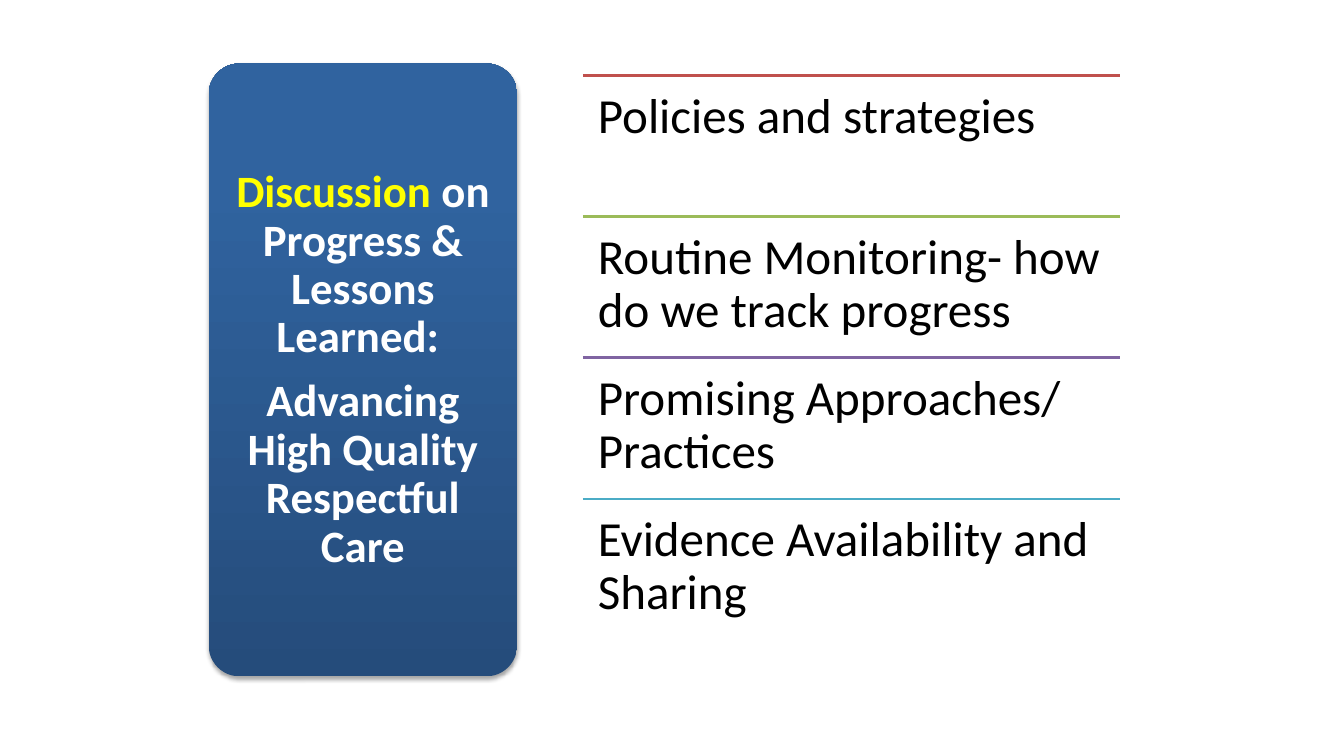
from pptx import Presentation
from pptx.dml.color import RGBColor
from pptx.enum.shapes import MSO_CONNECTOR, MSO_SHAPE
from pptx.enum.text import MSO_ANCHOR, PP_ALIGN
from pptx.oxml import parse_xml
from pptx.oxml.ns import nsdecls, qn
from pptx.util import Pt

PX = 9144  # 100 px to the inch
LINE = MSO_CONNECTOR.STRAIGHT
ROUND = MSO_SHAPE.ROUNDED_RECTANGLE
TOP, MIDDLE = MSO_ANCHOR.TOP, MSO_ANCHOR.MIDDLE
LEFT, CENTER = PP_ALIGN.LEFT, PP_ALIGN.CENTER

COLORS = {
    "red": "C0504D", "green": "9BBB59", "purple": "8064A2", "aqua": "4BACC6",
    "deep": "254C7B", "blue": "30639F", "light": "2E63A2",
    "black": "000000", "white": "FFFFFF", "yellow": "FFFF00",
}
TOPICS = [
    ("Policies and strategies", "red"),
    ("Routine Monitoring- how do we track progress", "green"),
    ("Promising Approaches/ Practices", "purple"),
    ("Evidence Availability and Sharing", "aqua"),
]
TITLE = [
    [("Discussion", "yellow"), (" on Progress & Lessons Learned: ", "white")],
    [("Advancing High Quality Respectful Care", "white")],
]


def px(*vals):
    return [round(val * PX) for val in vals]


def rgb(name):
    return RGBColor.from_string(COLORS[name])


def add_text(slide, box, paras, size, bold=False, align=LEFT, anchor=TOP):
    frame = slide.shapes.add_textbox(*px(*box)).text_frame
    frame.word_wrap = True
    frame.vertical_anchor = anchor
    frame.margin_left = frame.margin_right = 15 * PX
    frame.margin_top = frame.margin_bottom = 15 * PX
    frame.text = "\n".join("".join(text for text, _ in runs) for runs in paras)
    for para, runs in zip(frame.paragraphs, paras):
        para.alignment = align
        para.line_spacing = 0.9
        para.space_after = Pt(round(size * 0.35))
        para.text = ""
        for text, color in runs:
            run = para.add_run()
            run.text = text
            run.font.name = "Calibri"
            run.font.size = Pt(size)
            run.font.bold = bold
            run.font.color.rgb = rgb(color)


def add_rule(slide, left, top, width, color):
    rule = slide.shapes.add_connector(LINE, *px(left, top, left + width, top))
    rule.line.color.rgb = rgb(color)
    rule.line.width = Pt(2)
    rule._element.spPr.append(parse_xml(f"<a:effectLst {nsdecls('a')}/>"))


def add_panel(slide, box, stops):
    panel = slide.shapes.add_shape(ROUND, *px(*box))
    panel.adjustments[0] = 0.1
    panel.line.fill.background()
    panel.shadow.inherit = False
    # Gradient running upwards from the dark edge
    marks = "".join(
        f'<a:gs pos="{pos * 1000}"><a:srgbClr val="{COLORS[name]}"/></a:gs>'
        for pos, name in stops)
    props = panel._element.spPr
    props.find(qn("a:prstGeom")).addnext(parse_xml(
        f'<a:gradFill {nsdecls("a")} rotWithShape="1"><a:gsLst>{marks}</a:gsLst>'
        '<a:lin ang="16200000" scaled="0"/></a:gradFill>'))
    # Soft shadow below
    props.find(qn("a:effectLst")).append(parse_xml(
        f'<a:outerShdw {nsdecls("a")} blurRad="{Pt(3.1)}" dist="{Pt(1.8)}" '
        'dir="5400000" rotWithShape="0"><a:srgbClr val="000000">'
        '<a:alpha val="35000"/></a:srgbClr></a:outerShdw>'))


def main():
    deck = Presentation()
    deck.slide_width, deck.slide_height = px(1333, 750)
    slide = deck.slides.add_slide(deck.slide_layouts[6])

    # Ruled list of topics
    left, top, width, step = 578, 75, 533, 140
    for row, (text, color) in enumerate(TOPICS):
        y = top + row * step
        add_rule(slide, left, y, width, color)
        add_text(slide, (left, y, width, step), [[(text, "black")]], 35)

    # Title panel
    add_panel(slide, (207, 63, 306, 608),
              [(0, "deep"), (80, "blue"), (100, "light")])
    add_text(slide, (208, 81, 304, 573), TITLE, 32, True, CENTER, MIDDLE)

    deck.save("out.pptx")


if __name__ == "__main__":
    main()
